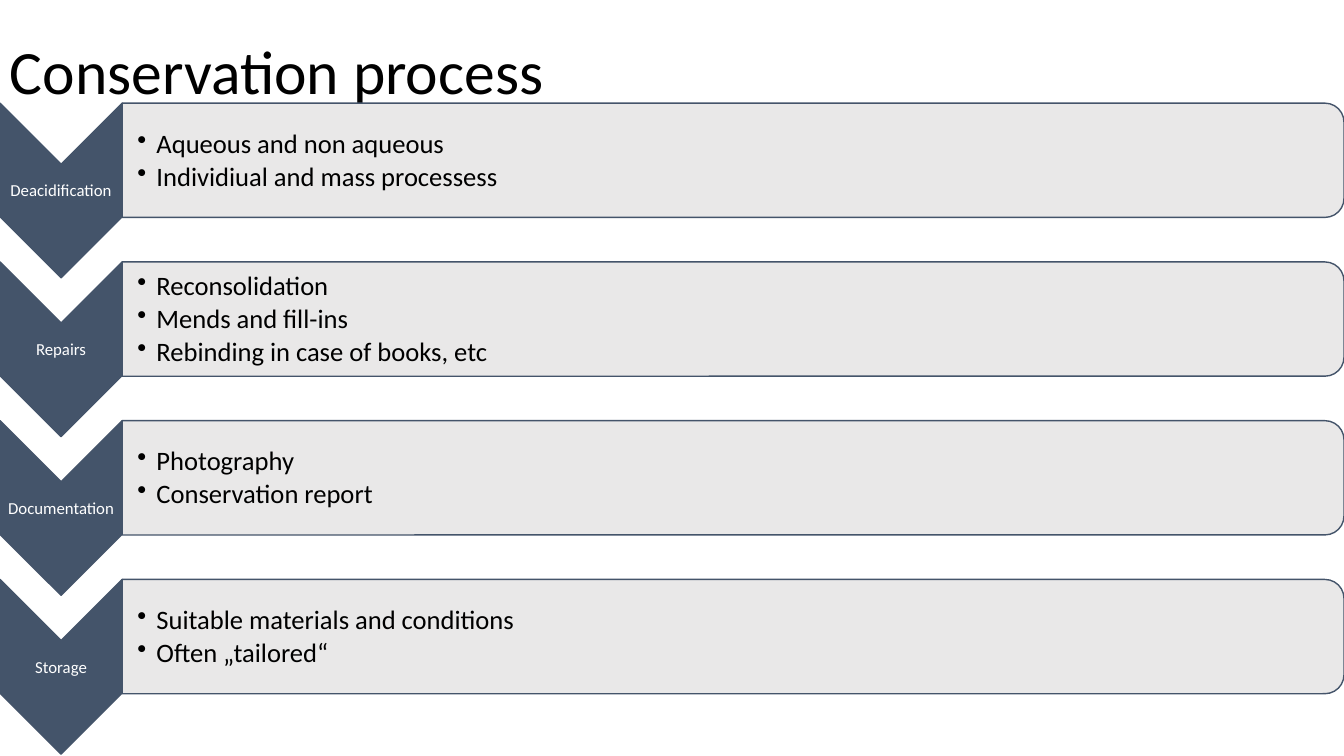
from lxml import etree
from pptx import Presentation, util as u
from pptx.dml.color import RGBColor
from pptx.enum import shapes, text
from pptx.oxml import ns

COLORS = {"slate": "44546A", "panel": "E7E6E6", "ink": "000000", "label": "FFFFFF"}
WIDTH, HEIGHT = 13.33, 7.5
COLUMN, ROW = WIDTH / 11, HEIGHT * 0.21
FIRST_ROW = 0.65

STAGES = [
    ("Deacidification", ["Aqueous and non aqueous", "Individiual and mass processess"]),
    ("Repairs", ["Reconsolidation", "Mends and fill-ins", "Rebinding in case of books, etc"]),
    ("Documentation", ["Photography", "Conservation report"]),
    ("Storage", ["Suitable materials and conditions", "Often „tailored“"]),
]


def write_lines(frame, lines, size, color, align=text.PP_ALIGN.LEFT, after=0, bullet=None):
    for index, line in enumerate(lines):
        paragraph = frame.paragraphs[0] if index == 0 else frame.add_paragraph()
        paragraph.alignment = align
        paragraph.line_spacing = 0.9
        paragraph.space_before = u.Pt(0)
        paragraph.space_after = u.Pt(size * after)
        if bullet:
            properties = paragraph._p.get_or_add_pPr()
            properties.set("marL", str(u.Inches(0.19)))
            properties.set("indent", str(-u.Inches(0.19)))
            etree.SubElement(properties, ns.qn("a:buChar"), char=bullet)
        run = paragraph.add_run()
        run.text = line
        run.font.name = "Calibri"
        run.font.size = u.Pt(size)
        run.font.color.rgb = RGBColor.from_string(COLORS[color])


class ProcessSlide:
    """Draws the process chart on a slide, measured in grid columns and rows."""

    def __init__(self, deck):
        self.slide = deck.slides.add_slide(deck.slide_layouts[6])

    def words(self, column, row, columns, rows, lines, insets=(0.01, 0.01), **style):
        box = self.slide.shapes.add_textbox(
            u.Inches(column * COLUMN), u.Inches(row * ROW),
            u.Inches(columns * COLUMN), u.Inches(rows * ROW))
        frame = box.text_frame
        frame.word_wrap = True
        frame.vertical_anchor = text.MSO_ANCHOR.MIDDLE
        frame.margin_left, frame.margin_right = map(u.Inches, insets)
        frame.margin_top = frame.margin_bottom = u.Inches(0.01)
        write_lines(frame, lines, **style)

    def turned(self, preset, column, row, columns, rows, fill, opacity=100):
        across, down = columns * COLUMN, rows * ROW
        left = column * COLUMN + (across - down) / 2
        top = row * ROW + (down - across) / 2
        block = self.slide.shapes.add_shape(
            preset, u.Inches(left), u.Inches(top), u.Inches(down), u.Inches(across))
        block.rotation = 90
        block.shadow.inherit = False
        block.fill.solid()
        block.fill.fore_color.rgb = RGBColor.from_string(COLORS[fill])
        if opacity < 100:
            tint = block._element.spPr.find(".//" + ns.qn("a:srgbClr"))
            etree.SubElement(tint, ns.qn("a:alpha"), val=str(opacity * 1000))
        block.line.color.rgb = RGBColor.from_string(COLORS["slate"])
        block.line.width = u.Pt(1)

    def title(self, wording):
        self.words(0, 0.01, 9.5, 0.92, [wording], insets=(0.1, 0.1), size=44, color="ink")

    def stage(self, row, name, steps):
        self.turned(shapes.MSO_SHAPE.CHEVRON, 0, row, 1, 1.1, "slate")
        self.words(0, row + 0.39, 1, 0.33, [name], size=12, color="label",
                   align=text.PP_ALIGN.CENTER, after=0.35)
        self.turned(shapes.MSO_SHAPE.ROUND_2_SAME_RECTANGLE, 1, row, 10, 0.72, "panel", 90)
        self.words(1, row + 0.04, 9.96, 0.65, steps, insets=(0.15, 0.01),
                   size=19, color="ink", after=0.15, bullet="•")


def main():
    deck = Presentation()
    deck.slide_width, deck.slide_height = u.Inches(WIDTH), u.Inches(HEIGHT)
    process = ProcessSlide(deck)
    process.title("Conservation process")
    for index, (name, steps) in enumerate(STAGES):
        process.stage(FIRST_ROW + index, name, steps)
    deck.save("out.pptx")


if __name__ == "__main__":
    main()
